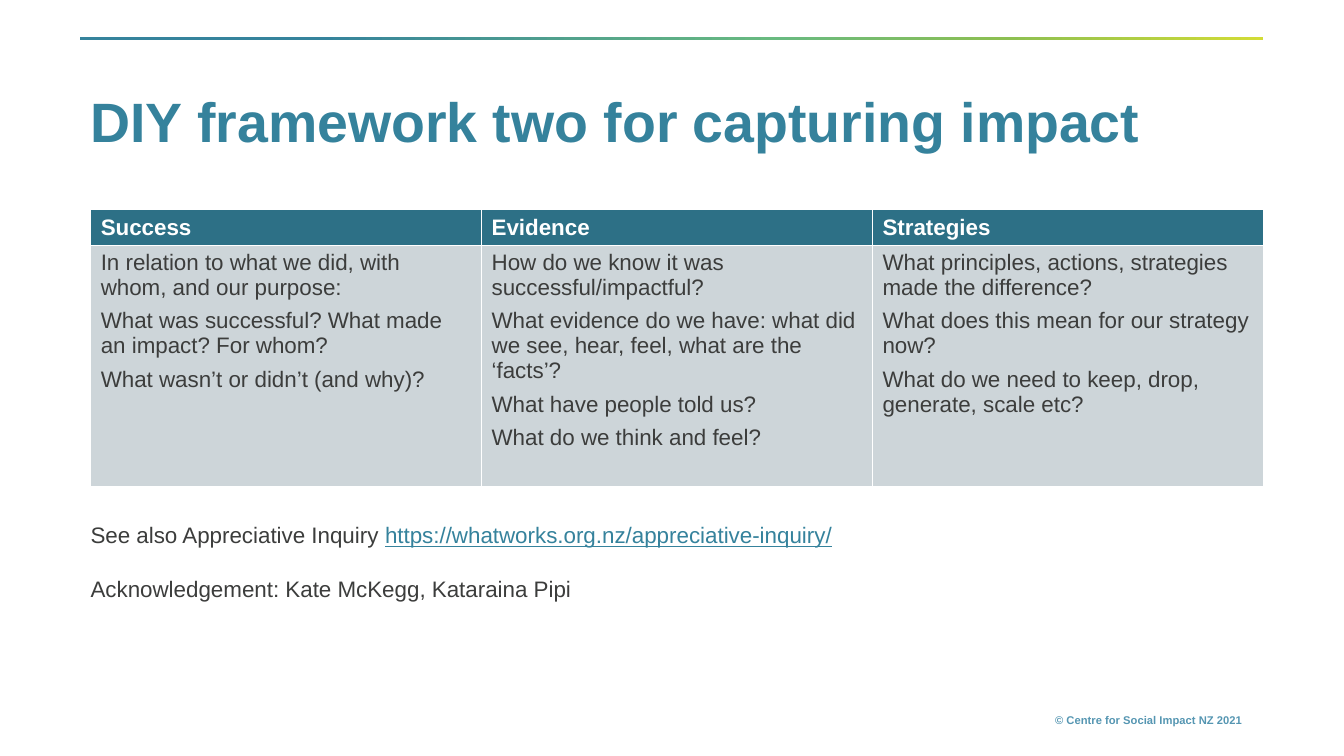
"""Build the slide "DIY framework two for capturing impact"."""
import copy

import pptx
import pptx.dml.color
import pptx.enum.shapes
import pptx.enum.text
import pptx.oxml.ns
import pptx.util

TEAL, INK, WHITE = "35829C", "3C3D3C", "FFFFFF"


def rgb(value):
    """Turn a hex string into a colour."""
    return pptx.dml.color.RGBColor.from_string(value)


def add_run(p, text, size=16, color=INK, bold=False, underline=False):
    """Append formatted text to a paragraph."""
    r = p.add_run()
    r.text = text
    r.font.name = "Arial"
    r.font.size = pptx.util.Pt(size)
    r.font.color.rgb = rgb(color)
    r.font.bold = bold
    r.font.underline = underline


prs = pptx.Presentation()
prs.slide_width = pptx.util.Inches(13.33)
prs.slide_height = pptx.util.Inches(7.5)
s = prs.slides.add_slide(prs.slide_layouts[6])

# Left, top, width and height in percent of the slide
shares = {
    "rule": (5.93, 4.93, 88.05, 0.4),
    "title": (6, 10.37, 88, 12.27),
    "table": (6.75, 27.73, 87.25, 36.54),
    "notes": (6, 68.3, 84.55, 12.13),
    "footer": (66.69, 93.73, 26.48, 3.2),
}
sides = (prs.slide_width, prs.slide_height) * 2
box = {name: [int(v * side / 100) for v, side in zip(share, sides)]
       for name, share in shares.items()}

sp = s.shapes.add_shape(pptx.enum.shapes.MSO_SHAPE.RECTANGLE, *box["rule"])
sp.shadow.inherit = False
sp.line.fill.background()
sp.fill.gradient()
sp.fill.gradient_angle = 0
stops = sp._element.spPr.find(".//" + pptx.oxml.ns.qn("a:gsLst"))
for _ in range(2):
    stops.append(copy.deepcopy(stops[0]))
rule_colors = [(0.2, "35839C"), (0.59, "69BA80"), (0.78, "8CBF52"), (1, "D2DC36")]
for stop, (position, color) in zip(sp.fill.gradient_stops, rule_colors):
    stop.position = position
    stop.color.rgb = rgb(color)

frames = {}
for name in ("title", "notes", "footer"):
    frames[name] = s.shapes.add_textbox(*box[name]).text_frame
    frames[name].word_wrap = True

tf = frames["title"]
tf.vertical_anchor = pptx.enum.text.MSO_ANCHOR.MIDDLE
p = tf.paragraphs[0]
p.line_spacing = 0.9
add_run(p, "DIY framework two for capturing impact", size=39.6, color=TEAL, bold=True)

tf = frames["notes"]
p = tf.paragraphs[0]
add_run(p, "See also Appreciative Inquiry ")
add_run(p, "https://whatworks.org.nz/appreciative-inquiry/", color=TEAL, underline=True)
p = tf.add_paragraph()
p.space_before = pptx.util.Pt(19.5)
add_run(p, "Acknowledgement: Kate McKegg, Kataraina Pipi")

p = frames["footer"].paragraphs[0]
p.alignment = pptx.enum.text.PP_ALIGN.RIGHT
add_run(p, "© Centre for Social Impact NZ 2021", size=8, color="5596B2", bold=True)

columns = {
    "Success": [
        "In relation to what we did, with whom, and our purpose:",
        "What was successful? What made an impact? For whom?",
        "What wasn’t or didn’t (and why)?",
    ],
    "Evidence": [
        "How do we know it was successful/impactful?",
        "What evidence do we have: what did we see, hear, feel, what are the ‘facts’?",
        "What have people told us?",
        "What do we think and feel?",
    ],
    "Strategies": [
        "What principles, actions, strategies made the difference?",
        "What does this mean for our strategy now?",
        "What do we need to keep, drop, generate, scale etc?",
    ],
}
table = s.shapes.add_table(2, len(columns), *box["table"]).table
table.rows[0].height = pptx.util.Inches(0.35)
table.rows[1].height = box["table"][3] - table.rows[0].height

for col, (heading, questions) in enumerate(columns.items()):
    for row, texts in enumerate(([heading], questions)):
        header = row == 0
        cell = table.cell(row, col)
        if header:
            cell.margin_top = pptx.util.Inches(0.06)
            cell.margin_bottom = pptx.util.Inches(0.03)
        cell.fill.solid()
        cell.fill.fore_color.rgb = rgb("2D7086" if header else "CDD5D9")
        tf = cell.text_frame
        for i, text in enumerate(texts):
            p = tf.add_paragraph() if i else tf.paragraphs[0]
            p.space_after = pptx.util.Pt(0 if header else 6)
            add_run(p, text, color=WHITE if header else INK, bold=header)

prs.save("out.pptx")
